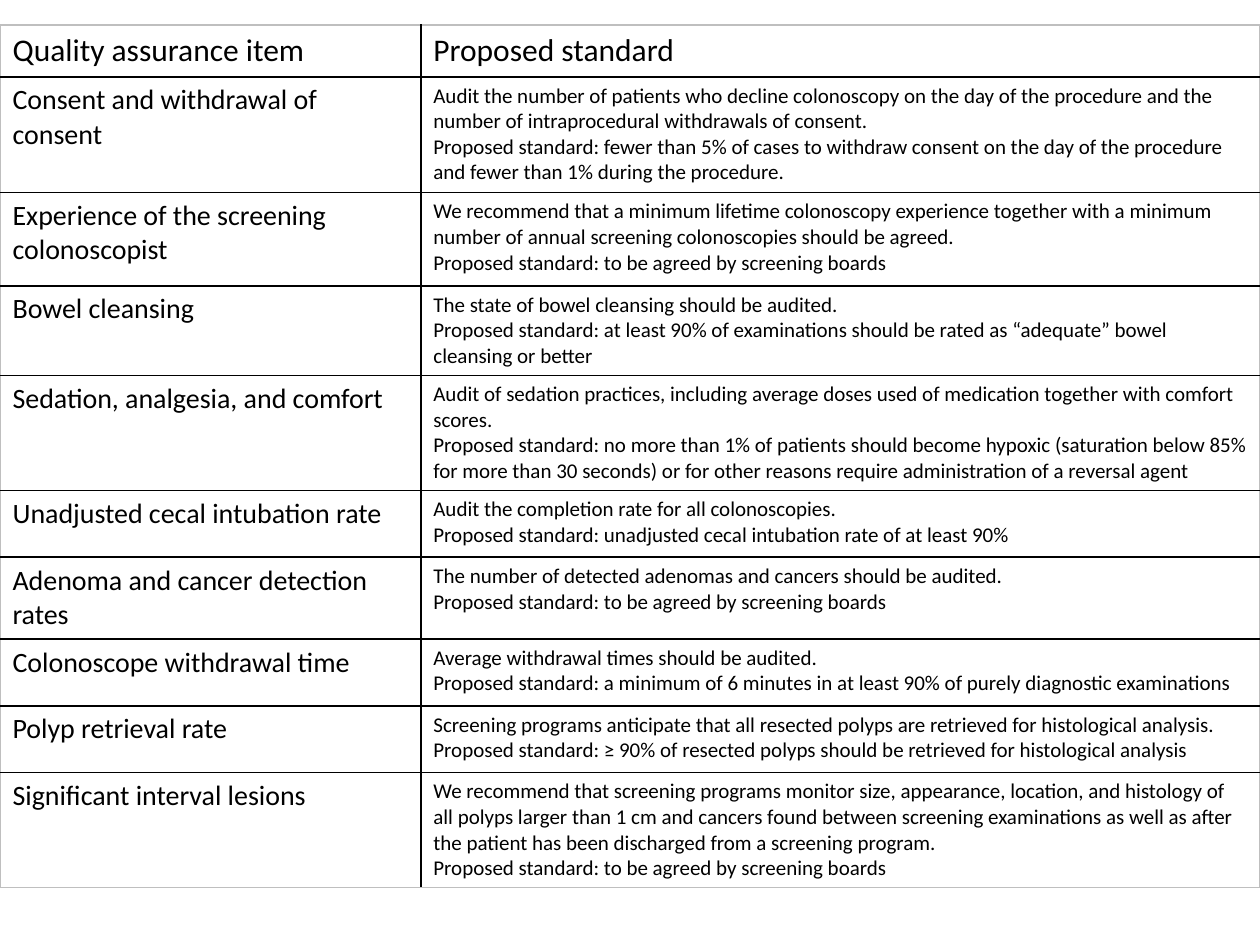
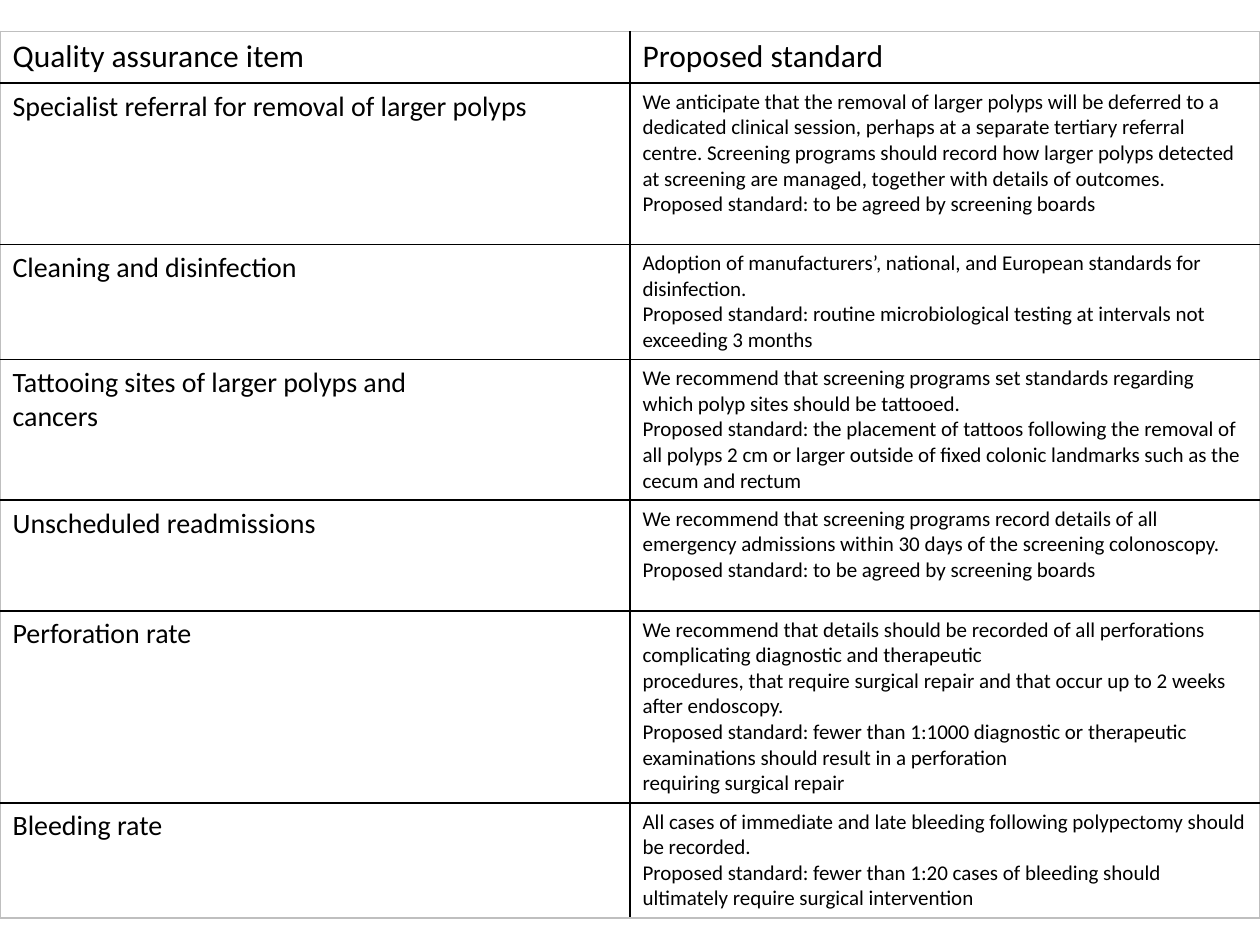
from dataclasses import dataclass

from lxml.etree import SubElement
from pptx import Presentation
from pptx.dml.color import RGBColor
from pptx.enum.text import MSO_ANCHOR
from pptx.oxml.ns import qn
from pptx.presentation import Presentation as Deck
from pptx.table import _Cell
from pptx.util import Inches, Pt

# Shared look
COLORS = {"text": "000000", "inner_line": "000000", "outer_line": "BFBFBF"}
LINE_WIDTH = Pt(1)
SLIDE_WIDTH = Inches(10)
HEADINGS = ("Quality assurance item", "Proposed standard")
HEADER_HEIGHT = 0.41
HEADER_SIZE = 18
COLUMN_SIZES = (16, 12)
CELL_FORMAT = {
    "margin_left": Inches(0.1),
    "margin_right": Inches(0.1),
    "margin_top": Inches(0.05),
    "margin_bottom": Inches(0.05),
    "vertical_anchor": MSO_ANCHOR.TOP,
}
TABLE_FORMAT = {"first_row": False, "horz_banding": False}
TO_BE_AGREED = "Proposed standard: to be agreed by screening boards"


@dataclass(frozen=True)
class QualityItem:
    height: float
    name: str
    standard: str


@dataclass(frozen=True)
class QualityTable:
    top: float
    column_widths: tuple[float, float]
    items: tuple[QualityItem, ...]


# Content: a line break starts a new paragraph
TABLES = (
    QualityTable(0.2, (3.34, 6.66), (
        QualityItem(
            0.92, "Consent and withdrawal of consent",
            "Audit the number of patients who decline colonoscopy on the day of the procedure "
            "and the number of intraprocedural withdrawals of consent.\n"
            "Proposed standard: fewer than 5% of cases to withdraw consent on the day of the "
            "procedure and fewer than 1% during the procedure."),
        QualityItem(
            0.74, "Experience of the screening colonoscopist",
            "We recommend that a minimum lifetime colonoscopy experience together with a "
            "minimum number of annual screening colonoscopies should be agreed.\n"
            + TO_BE_AGREED),
        QualityItem(
            0.71, "Bowel cleansing",
            "The state of bowel cleansing should be audited.\n"
            "Proposed standard: at least 90% of examinations should be rated as “adequate” "
            "bowel cleansing or better"),
        QualityItem(
            0.91, "Sedation, analgesia, and comfort",
            "Audit of sedation practices, including average doses used of medication together "
            "with comfort scores.\n"
            "Proposed standard: no more than 1% of patients should become hypoxic (saturation "
            "below 85% for more than 30 seconds) or for other reasons require administration "
            "of a reversal agent"),
        QualityItem(
            0.53, "Unadjusted cecal intubation rate",
            "Audit the completion rate for all colonoscopies.\n"
            "Proposed standard: unadjusted cecal intubation rate of at least 90%"),
        QualityItem(
            0.65, "Adenoma and cancer detection\nrates",
            "The number of detected adenomas and cancers should be audited.\n" + TO_BE_AGREED),
        QualityItem(
            0.53, "Colonoscope withdrawal time",
            "Average withdrawal times should be audited.\n"
            "Proposed standard: a minimum of 6 minutes in at least 90% of purely diagnostic "
            "examinations"),
        QualityItem(
            0.53, "Polyp retrieval rate",
            "Screening programs anticipate that all resected polyps are retrieved for "
            "histological analysis.\n"
            "Proposed standard: ≥ 90% of resected polyps should be retrieved for histological "
            "analysis"),
        QualityItem(
            0.91, "Significant interval lesions",
            "We recommend that screening programs monitor size, appearance, location, and "
            "histology of all polyps larger than 1 cm and cancers found between screening "
            "examinations as well as after the patient has been discharged from a screening "
            "program.\n" + TO_BE_AGREED),
    )),
    QualityTable(0.25, (5, 5), (
        QualityItem(
            1.28, "Specialist referral for removal of larger polyps",
            "We anticipate that the removal of larger polyps will be deferred to a dedicated "
            "clinical session, perhaps at a separate tertiary referral centre. Screening "
            "programs should record how larger polyps detected at screening are managed, "
            "together with details of outcomes.\n" + TO_BE_AGREED),
        QualityItem(
            0.91, "Cleaning and disinfection",
            "Adoption of manufacturers’, national, and European standards for disinfection.\n"
            "Proposed standard: routine microbiological testing at intervals not exceeding "
            "3 months"),
        QualityItem(
            1.11, "Tattooing sites of larger polyps and\ncancers",
            "We recommend that screening programs set standards regarding which polyp sites "
            "should be tattooed.\n"
            "Proposed standard: the placement of tattoos following the removal of all polyps "
            "2 cm or larger outside of fixed colonic landmarks such as the cecum and rectum"),
        QualityItem(
            0.88, "Unscheduled readmissions",
            "We recommend that screening programs record details of all emergency admissions "
            "within 30 days of the screening colonoscopy.\n" + TO_BE_AGREED),
        QualityItem(
            1.52, "Perforation rate",
            "We recommend that details should be recorded of all perforations complicating "
            "diagnostic and therapeutic\n"
            "procedures, that require surgical repair and that occur up to 2 weeks after "
            "endoscopy.\n"
            "Proposed standard: fewer than 1:1000 diagnostic or therapeutic examinations "
            "should result in a perforation\n"
            "requiring surgical repair"),
        QualityItem(
            0.91, "Bleeding rate",
            "All cases of immediate and late bleeding following polypectomy should be "
            "recorded.\n"
            "Proposed standard: fewer than 1:20 cases of bleeding should ultimately require "
            "surgical intervention"),
    )),
)


def apply_format(target: object, values: dict) -> None:
    for name, value in values.items():
        setattr(target, name, value)


def add_borders(cell: _Cell, outer_sides: dict[str, bool]) -> None:
    """Draw the four sides, lighter where they lie on the table's edge."""
    properties = cell._tc.get_or_add_tcPr()
    for side, is_outer in outer_sides.items():
        line = SubElement(properties, qn(f"a:{side}"), w=str(LINE_WIDTH))
        fill = SubElement(line, qn("a:solidFill"))
        color = COLORS["outer_line" if is_outer else "inner_line"]
        SubElement(fill, qn("a:srgbClr"), val=color)


def write_cell(cell: _Cell, text: str, size: int) -> None:
    apply_format(cell, CELL_FORMAT)
    cell.text = text
    for paragraph in cell.text_frame.paragraphs:
        for run in paragraph.runs:
            apply_format(run.font, {"name": "Calibri", "size": Pt(size), "bold": False})
            run.font.color.rgb = RGBColor.from_string(COLORS["text"])


def add_quality_slide(presentation: Deck, content: QualityTable) -> None:
    slide = presentation.slides.add_slide(presentation.slide_layouts[6])
    rows = [(HEADER_HEIGHT, HEADINGS, (HEADER_SIZE, HEADER_SIZE))]
    rows += [(item.height, (item.name, item.standard), COLUMN_SIZES) for item in content.items]
    total_height = sum(height for height, _, _ in rows)
    shape = slide.shapes.add_table(len(rows), len(HEADINGS), Inches(0), Inches(content.top),
                                   SLIDE_WIDTH, Inches(total_height))
    table = shape.table
    apply_format(table, TABLE_FORMAT)
    for column, width in zip(table.columns, content.column_widths):
        column.width = Inches(width)

    last_row, last_column = len(rows) - 1, len(HEADINGS) - 1
    for row_index, (height, texts, sizes) in enumerate(rows):
        table.rows[row_index].height = Inches(height)
        for column_index, (text, size) in enumerate(zip(texts, sizes)):
            cell = table.cell(row_index, column_index)
            write_cell(cell, text, size)
            add_borders(cell, {
                "lnL": column_index == 0,
                "lnR": column_index == last_column,
                "lnT": row_index == 0,
                "lnB": row_index == last_row,
            })
            cell.fill.background()


def main() -> None:
    presentation = Presentation()
    apply_format(presentation, {"slide_width": SLIDE_WIDTH, "slide_height": Inches(7.5)})
    for content in TABLES:
        add_quality_slide(presentation, content)
    presentation.save("out.pptx")


if __name__ == "__main__":
    main()
